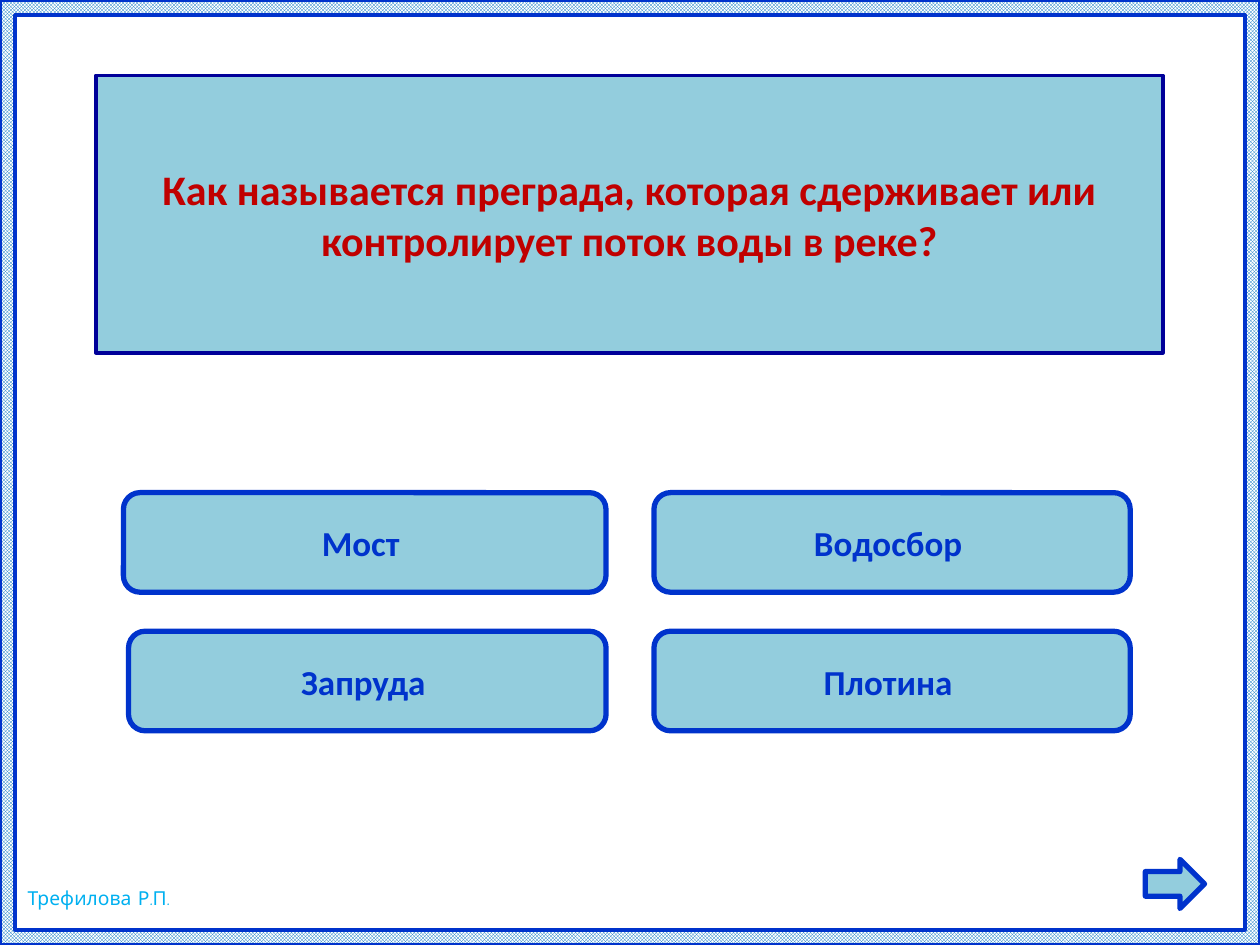
from dataclasses import dataclass

from lxml.etree import SubElement
from pptx import Presentation
from pptx.dml.color import RGBColor as RGB
from pptx.enum.dml import MSO_PATTERN as Pattern
from pptx.enum.shapes import MSO_SHAPE as Kind
from pptx.enum.text import MSO_ANCHOR as Anchor, MSO_AUTO_SIZE as Fit, PP_ALIGN as Align
from pptx.oxml.ns import qn
from pptx.util import Inches, Pt


@dataclass(frozen=True)
class Theme:
    white: RGB = RGB.from_string("FFFFFF")
    sky: RGB = RGB.from_string("93CDDD")
    blue: RGB = RGB.from_string("0033CC")
    navy: RGB = RGB.from_string("000099")
    check: RGB = RGB.from_string("0070C0")
    red: RGB = RGB.from_string("C00000")
    cyan: RGB = RGB.from_string("00B0F0")
    main: str = "Calibri"
    hand: str = "Comic Neue"
    ask: Pt = Pt(24)
    answer: Pt = Pt(20)
    small: Pt = Pt(11)


theme = Theme()


def paint(shape, line, width):
    shape.fill.solid()
    shape.fill.fore_color.rgb = theme.sky
    shape.line.color.rgb = line
    shape.line.width = Pt(width)


def write(shape, text, color, align=Align.CENTER, **style):
    frame = shape.text_frame
    frame.text = text
    frame.vertical_anchor = Anchor.MIDDLE
    para = frame.paragraphs[0]
    para.alignment = align
    font = para.runs[0].font
    for name, value in style.items():
        setattr(font, name, value)
    font.color.rgb = color


deck = Presentation()
deck.slide_width, deck.slide_height = Inches(10), Inches(7.5)
slide = deck.slides.add_slide(deck.slide_layouts[5])
shapes = slide.shapes

# Checked border
border = shapes.add_shape(Kind.FRAME, 0, 0, deck.slide_width, deck.slide_height)
border.adjustments[0] = 0.016
border.shadow.inherit = False
border.fill.patterned()
border.fill.pattern = Pattern.SMALL_CHECKER_BOARD
border.fill.fore_color.rgb = theme.check
border.fill.back_color.rgb = theme.white
border.line.color.rgb = theme.blue
border.line.width = Pt(2)

# Author
author = shapes.add_textbox(Inches(0.12), Inches(6.98), Inches(1.42), Inches(0.29))
author.text_frame.word_wrap = False
author.text_frame.auto_size = Fit.SHAPE_TO_FIT_TEXT
write(author, "Трефилова Р.П.", theme.cyan, Align.LEFT, size=theme.small, name=theme.hand)

# Question: the title placeholder takes a wave outline
title = shapes.title
place = {"left": 0.76, "top": 0.6, "width": 8.47, "height": 2.2}
for name, value in place.items():
    setattr(title, name, Inches(value))
wave = SubElement(title.element.spPr, qn("a:prstGeom"), prst="wave")
guides = SubElement(wave, qn("a:avLst"))
for name, value in {"adj1": 9400, "adj2": 0}.items():
    SubElement(guides, qn("a:gd"), name=name, fmla=f"val {value}")
paint(title, theme.navy, 2)
title.text_frame.auto_size = Fit.NONE
write(title, "Как называется преграда, которая сдерживает или контролирует поток воды в реке?",
      theme.red, size=theme.ask, name=theme.main, bold=True)

# Answers: left, top, width
answers = {
    "Мост ": (0.98, 3.91, 3.83),
    "Водосбор ": (5.19, 3.91, 3.78),
    "Запруда ": (1.02, 5.01, 3.79),
    "Плотина ": (5.19, 5.01, 3.78),
}
for text, (left, top, width) in answers.items():
    button = shapes.add_shape(Kind.ROUNDED_RECTANGLE, Inches(left), Inches(top),
                              Inches(width), Inches(0.79))
    button.shadow.inherit = False
    paint(button, theme.blue, 3)
    write(button, text, theme.blue, size=theme.answer, name=theme.main, bold=True)

# Next
arrow = shapes.add_shape(Kind.RIGHT_ARROW, Inches(9.09), Inches(6.82), Inches(0.47), Inches(0.39))
arrow.shadow.inherit = False
paint(arrow, theme.blue, 3)

deck.save("out.pptx")
